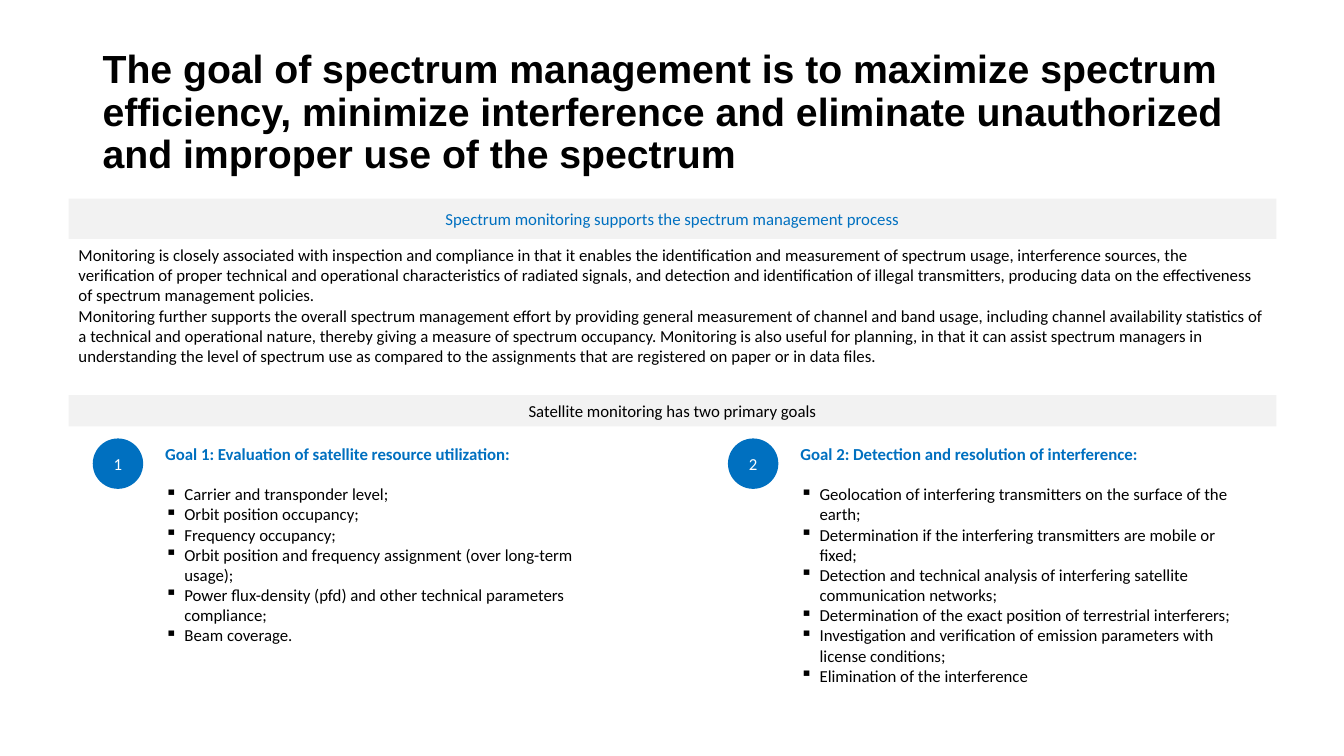
from dataclasses import dataclass

from lxml import etree
from pptx import Presentation
from pptx.dml.color import RGBColor
from pptx.enum.shapes import MSO_SHAPE
from pptx.enum.text import MSO_ANCHOR, PP_ALIGN
from pptx.oxml.ns import qn
from pptx.util import Inches, Pt

RECTANGLE, OVAL = MSO_SHAPE.RECTANGLE, MSO_SHAPE.OVAL
TOP, MIDDLE = MSO_ANCHOR.TOP, MSO_ANCHOR.MIDDLE
LEFT, CENTER = PP_ALIGN.LEFT, PP_ALIGN.CENTER

TITLE = ("The goal of spectrum management is to maximize spectrum efficiency, minimize "
         "interference and eliminate unauthorized and improper use of the spectrum")
MONITORING_BANNER = "Spectrum monitoring supports the spectrum management process"
MONITORING_ROLE = [
    "Monitoring is closely associated with inspection and compliance in that it enables the "
    "identification and measurement of spectrum usage, interference sources, the verification of "
    "proper technical and operational characteristics of radiated signals, and detection and "
    "identification of illegal transmitters, producing data on the effectiveness of spectrum "
    "management policies.",
    "Monitoring further supports the overall spectrum management effort by providing general "
    "measurement of channel and band usage, including channel availability statistics of a "
    "technical and operational nature, thereby giving a measure of spectrum occupancy. Monitoring "
    "is also useful for planning, in that it can assist spectrum managers in understanding the "
    "level of spectrum use as compared to the assignments that are registered on paper or in "
    "data files.",
]
GOALS_BANNER = "Satellite monitoring has two primary goals"
GOALS = [
    ("Goal 1: Evaluation of satellite resource utilization:", [
        "Carrier and transponder level;",
        "Orbit position occupancy;",
        "Frequency occupancy;",
        "Orbit position and frequency assignment (over long-term usage);",
        "Power flux-density (pfd) and other technical parameters compliance;",
        "Beam coverage.",
    ]),
    ("Goal 2: Detection and resolution of interference:", [
        "Geolocation of interfering transmitters on the surface of the earth;",
        "Determination if the interfering transmitters are mobile or fixed;",
        "Detection and technical analysis of interfering satellite communication networks;",
        "Determination of the exact position of terrestrial interferers;",
        "Investigation and verification of emission parameters with license conditions;",
        "Elimination of the interference",
    ]),
]


@dataclass(frozen=True)
class Theme:
    black: RGBColor = RGBColor(0, 0, 0)
    white: RGBColor = RGBColor(255, 255, 255)
    accent: RGBColor = RGBColor(0x00, 0x70, 0xC0)
    band: RGBColor = RGBColor(0xF2, 0xF2, 0xF2)
    title_font: str = "Arial"
    body_font: str = "Calibri"
    title_size: int = 28
    body_size: int = 12
    heading_gap: float = 14.6


THEME = Theme()
SLIDE_W, SLIDE_H = 13.33, 7.5
BAND_LEFT, BAND_W = 0.68, 11.98
CONTENT_LEFT, CONTENT_W = 0.92, 11.5
GOALS_TOP, GOAL_PITCH = 4.35, 6.3
BADGE, BADGE_GAP = 0.5, 0.12
GOAL_W, GOAL_H = 4.58, 2.48
BULLET_INDENT = 0.19


def write(frame, texts, color=THEME.black, align=LEFT, anchor=TOP,
          font=THEME.body_font, size=THEME.body_size, bold=False):
    frame.word_wrap = True
    frame.vertical_anchor = anchor
    for index, text in enumerate(texts):
        paragraph = frame.add_paragraph() if index else frame.paragraphs[0]
        paragraph.text = text
        paragraph.alignment = align
        style = {"name": font, "size": Pt(size), "bold": bold}
        for attribute, value in style.items():
            setattr(paragraph.runs[0].font, attribute, value)
        paragraph.runs[0].font.color.rgb = color
    return frame.paragraphs


def add_text(slide, box, texts, **style):
    return write(slide.shapes.add_textbox(*map(Inches, box)).text_frame, texts, **style)


def add_panel(slide, kind, box, fill, text, color):
    panel = slide.shapes.add_shape(kind, *map(Inches, box))
    panel.shadow.inherit = False
    panel.fill.solid()
    panel.fill.fore_color.rgb = fill
    panel.line.fill.background()
    write(panel.text_frame, [text], color=color, align=CENTER, anchor=MIDDLE)


def add_bullet(paragraph):
    properties = paragraph._p.get_or_add_pPr()
    properties.set("marL", str(Inches(BULLET_INDENT)))
    properties.set("indent", str(-Inches(BULLET_INDENT)))
    etree.SubElement(properties, qn("a:buChar"), char="▪")


def add_goal(slide, number, heading, points):
    left = CONTENT_LEFT + (number - 1) * GOAL_PITCH
    text_left = left + BADGE + BADGE_GAP
    first, *bullets = add_text(slide, (text_left, GOALS_TOP, GOAL_W, GOAL_H), [heading, *points])
    first.runs[0].font.bold = True
    first.runs[0].font.color.rgb = THEME.accent
    bullets[0].space_before = Pt(THEME.heading_gap)
    for bullet in bullets:
        add_bullet(bullet)
    add_panel(slide, OVAL, (left, GOALS_TOP, BADGE, BADGE), THEME.accent, str(number), THEME.white)


def main():
    deck = Presentation()
    deck.slide_width, deck.slide_height = Inches(SLIDE_W), Inches(SLIDE_H)
    slide = deck.slides.add_slide(deck.slide_layouts[6])

    title, = add_text(slide, (CONTENT_LEFT, 0.4, CONTENT_W, 1.45), [TITLE], anchor=MIDDLE,
                      font=THEME.title_font, size=THEME.title_size, bold=True)
    title.line_spacing = 0.9
    add_text(slide, (BAND_LEFT, 2.38, BAND_W, 1.27), MONITORING_ROLE)
    for top, height, text, color in [(1.97, 0.4, MONITORING_BANNER, THEME.accent),
                                     (3.92, 0.31, GOALS_BANNER, THEME.black)]:
        add_panel(slide, RECTANGLE, (BAND_LEFT, top, BAND_W, height), THEME.band, text, color)
    for number, (heading, points) in enumerate(GOALS, 1):
        add_goal(slide, number, heading, points)

    deck.save("out.pptx")


if __name__ == "__main__":
    main()
